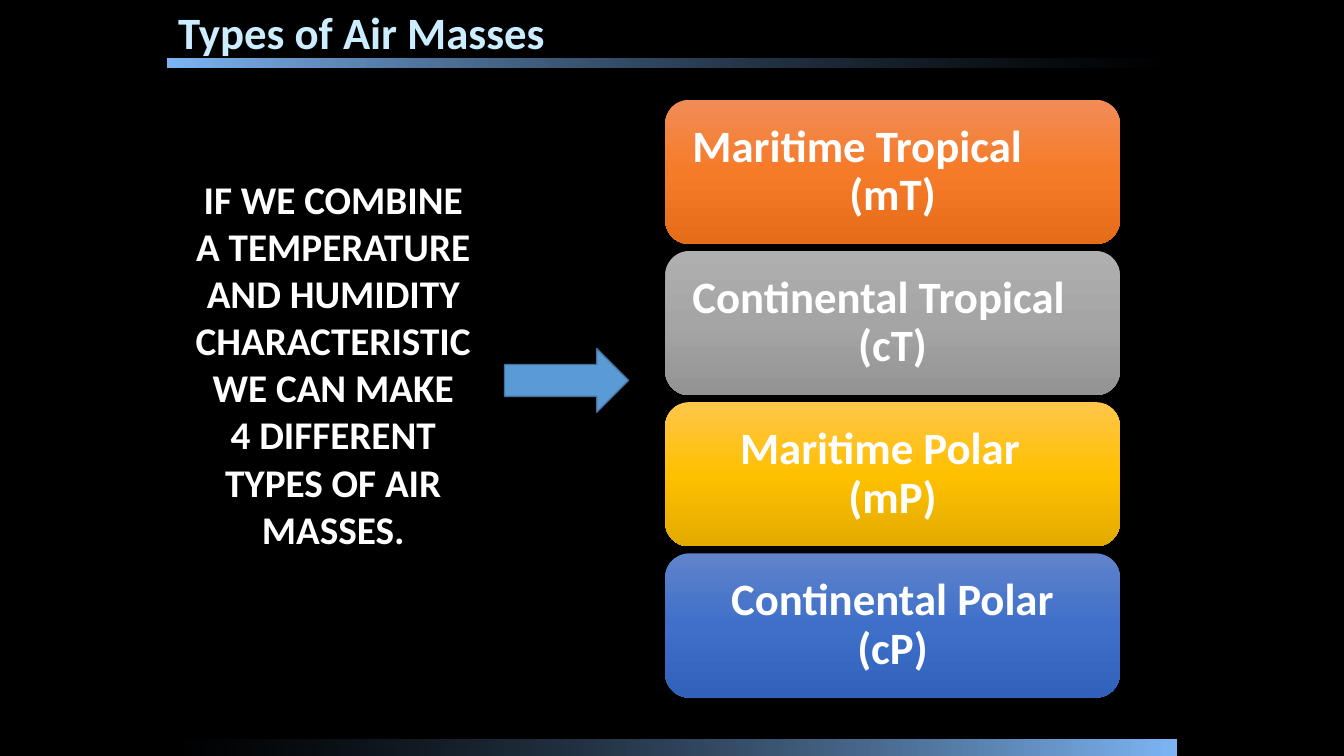
from dataclasses import dataclass

from lxml.etree import SubElement
from pptx import Presentation
from pptx.dml.color import RGBColor as RGB
from pptx.enum.shapes import MSO_SHAPE as Shape
from pptx.enum.text import MSO_ANCHOR as Anchor, MSO_AUTO_SIZE as Fit, PP_ALIGN as Align
from pptx.oxml.ns import qn
from pptx.util import Pt


@dataclass(frozen=True)
class Theme:
    font: str = "Calibri"
    back: str = "000000"
    text: str = "FFFFFF"
    title: str = "CCECFF"
    arrow: str = "5B9BD5"
    edge: str = "43739E"
    bar: tuple = (("7EB7F6", 100), ("3A5572", 0))
    big: int = 32
    mid: int = 28


THEME = Theme()

# First line, its indent (None: centred), symbol, gradient colours
CARDS = [
    ("Maritime Tropical", 0, "(mT)", ("F18C57", "F67B28", "E56C19")),
    ("Continental Tropical", 0, "(cT)", ("AFAFAF", "A5A5A5", "939393")),
    ("Maritime Polar", 34, "(mP)", ("FFC64B", "FFC000", "E3AB00")),
    ("Continental Polar", None, "(cP)", ("6183CB", "3E70CA", "3062BB")),
]

CLAIM = [
    ["IF WE COMBINE", "A TEMPERATURE", "AND HUMIDITY", "CHARACTERISTIC", "WE CAN MAKE"],
    ["4 DIFFERENT", "TYPES OF AIR"],
    ["MASSES."],
]


def place(item, left, top, width, height):
    item.left, item.top = Pt(left), Pt(top)
    item.width, item.height = Pt(width), Pt(height)


def add_run(para, text, size, color):
    run = para.add_run()
    run.text = text
    font = run.font
    font.name, font.size, font.bold = THEME.font, Pt(size), True
    font.color.rgb = RGB.from_string(color)


def set_para(para, align, line=1.0, indent=0):
    """Set alignment, spacing and left margin, without a bullet."""
    para.alignment, para.line_spacing = align, line
    para.space_before = para.space_after = Pt(0)
    props = para._p.get_or_add_pPr()
    props.set("marL", str(Pt(indent)))
    props.set("indent", "0")
    SubElement(props, qn("a:buNone"))


def set_frame(frame, anchor):
    frame.word_wrap, frame.auto_size = True, Fit.NONE
    frame.vertical_anchor = anchor


def set_grad(shape, stops, angle):
    """Fill with evenly spaced (colour, opacity percent) stops."""
    shape.fill.gradient()
    grad = shape._element.spPr.find(qn("a:gradFill"))
    grad.find(qn("a:lin")).set("ang", str(angle * 60000))
    items = grad.find(qn("a:gsLst"))
    for old in list(items):
        items.remove(old)
    for i, (color, alpha) in enumerate(stops):
        stop = SubElement(items, qn("a:gs"), pos=str(100000 * i // (len(stops) - 1)))
        tint = SubElement(stop, qn("a:srgbClr"), val=color)
        if alpha < 100:
            SubElement(tint, qn("a:alpha"), val=str(alpha * 1000))


def add_shape(slide, kind, *box):
    shape = slide.shapes.add_shape(kind, *map(Pt, box))
    shape.shadow.inherit = False
    shape.line.fill.background()
    return shape


def add_bar(slide, top, height, turn=0):
    bar = add_shape(slide, Shape.RECTANGLE, 120, top, 720, height)
    bar.rotation = turn
    set_grad(bar, THEME.bar, 0)


def add_card(slide, top, name, indent, symbol, colors):
    card = add_shape(slide, Shape.ROUNDED_RECTANGLE, 475.2, top, 324.7, 103)
    set_grad(card, [(color, 100) for color in colors], 90)
    frame = card.text_frame
    set_frame(frame, Anchor.MIDDLE)
    frame.margin_left = frame.margin_right = Pt(14.4)
    first, second = frame.paragraphs[0], frame.add_paragraph()
    set_para(first, Align.CENTER if indent is None else Align.LEFT, 0.9, indent or 0)
    set_para(second, Align.CENTER, 0.9)
    add_run(first, name, THEME.big, THEME.text)
    add_run(second, symbol, THEME.big, THEME.text)


def add_arrow(slide):
    arrow = add_shape(slide, Shape.RIGHT_ARROW, 360.4, 249, 88.6, 45.5)
    arrow.fill.solid()
    arrow.fill.fore_color.rgb = RGB.from_string(THEME.arrow)
    arrow.line.color.rgb = RGB.from_string(THEME.edge)
    arrow.line.width = Pt(1)


def fill_title(title):
    place(title, 120, 0, 471, 46)
    set_frame(title.text_frame, Anchor.TOP)
    para = title.text_frame.paragraphs[0]
    set_para(para, Align.LEFT)
    add_run(para, "Types of Air Masses", THEME.big, THEME.title)


def fill_claim(body):
    place(body, 116, 121.7, 244, 312.5)
    frame = body.text_frame
    set_frame(frame, Anchor.TOP)
    for i, lines in enumerate(CLAIM):
        para = frame.add_paragraph() if i else frame.paragraphs[0]
        set_para(para, Align.CENTER)
        for j, line in enumerate(lines):
            if j:
                para.add_line_break()
            add_run(para, line, THEME.mid, THEME.text)


def main():
    deck = Presentation()
    deck.slide_width, deck.slide_height = Pt(960), Pt(540)
    slide = deck.slides.add_slide(deck.slide_layouts[1])
    back = slide.background.fill
    back.solid()
    back.fore_color.rgb = RGB.from_string(THEME.back)

    add_bar(slide, 41.5, 6.5)
    add_bar(slide, 528, 12, 180)
    fill_title(slide.shapes.title)
    for i, card in enumerate(CARDS):
        add_card(slide, 71.3 + 108 * i, *card)
    add_arrow(slide)
    fill_claim(slide.placeholders[1])
    deck.save("out.pptx")


if __name__ == "__main__":
    main()
